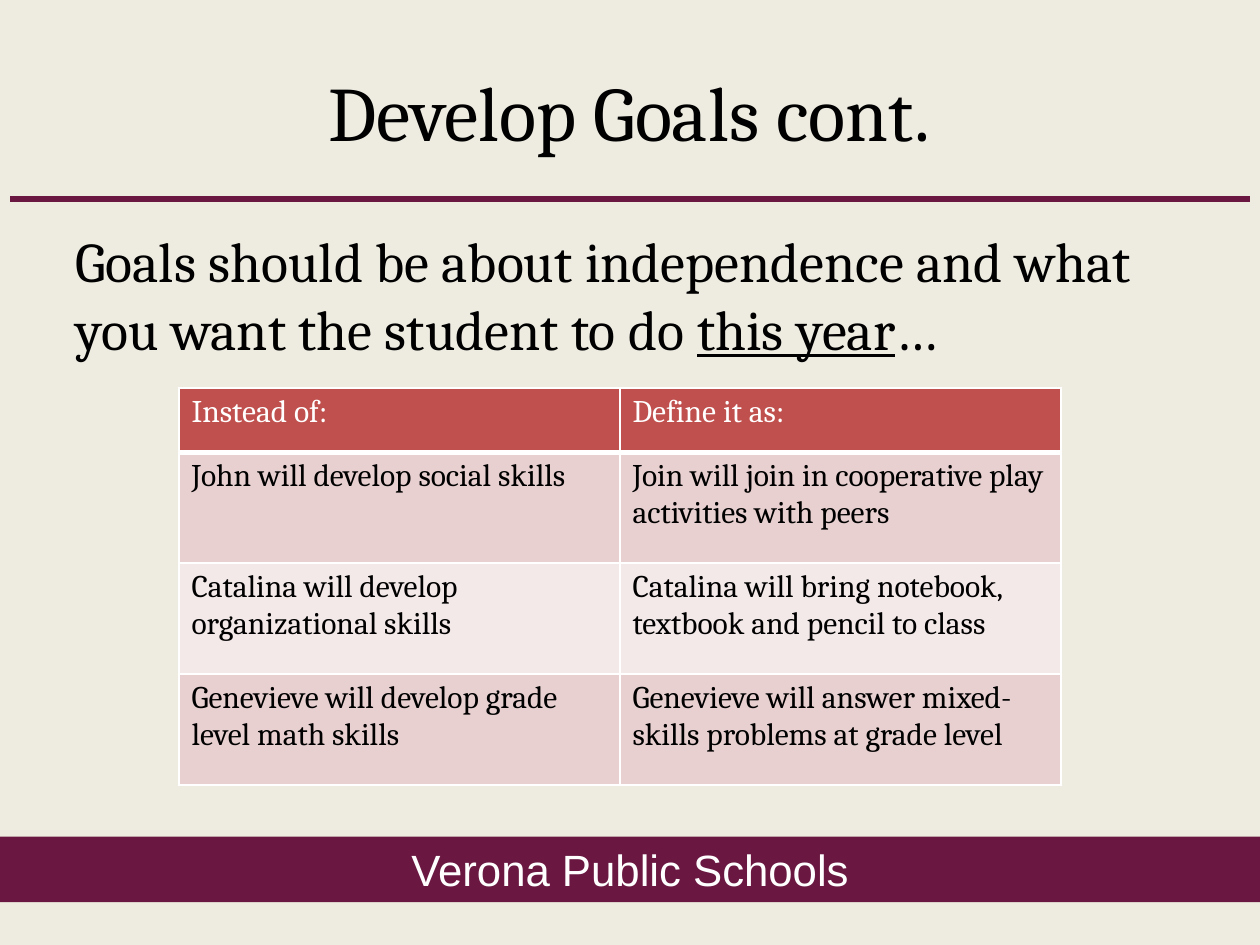
from lxml.etree import SubElement
from pptx import Presentation
from pptx.dml.color import RGBColor
from pptx.enum.shapes import MSO_CONNECTOR, MSO_SHAPE
from pptx.enum.text import MSO_ANCHOR, PP_ALIGN
from pptx.oxml.ns import qn
from pptx.util import Inches, Pt

TITLE = "Develop Goals cont."
GUIDANCE = [
    ("Goals should be about independence and what you want the student to do ", False),
    ("this year", True),
    ("…", False),
]
GOALS = [
    ("Instead of:", "Define it as:"),
    ("John will develop social skills",
     "Join will join in cooperative play activities with peers"),
    ("Catalina will develop organizational skills",
     "Catalina will bring notebook, textbook and pencil to class"),
    ("Genevieve will develop grade level math skills",
     "Genevieve will answer mixed-skills problems at grade level"),
]
SCHOOL = "Verona Public Schools"

WIDTH, HEIGHT = 10, 7.5
MARGIN = 0.05 * WIDTH
CONTENT_WIDTH = WIDTH - 2 * MARGIN
RULE_INSET, RULE_TOP = 0.08, 1.58
COLUMN_WIDTH, HEADER_HEIGHT, GOAL_HEIGHT = 3.5, 0.51, 0.88
MAROON, BLACK, WHITE = "6A1841", "000000", "FFFFFF"
HEADER_FILL, BANDS = "C0504D", ("E8D0D0", "F4E9E9")


def colour(value):
    return RGBColor.from_string(value)


def place(part, left, top, width, height):
    part.left, part.top = Inches(left), Inches(top)
    part.width, part.height = Inches(width), Inches(height)


def add_run(paragraph, text, size, ink=BLACK, face="Cambria", underline=False):
    run = paragraph.add_run()
    run.text = text
    run.font.size = Pt(size)
    run.font.name = face
    run.font.bold = False
    run.font.underline = underline
    run.font.color.rgb = colour(ink)


def add_borders(cell, weights):
    properties = cell._tc.get_or_add_tcPr()
    for side, weight in weights.items():
        border = SubElement(properties, qn(f"a:ln{side}"), w=str(Pt(weight)))
        fill = SubElement(border, qn("a:solidFill"))
        SubElement(fill, qn("a:srgbClr"), val=WHITE)


presentation = Presentation()
presentation.slide_width, presentation.slide_height = Inches(WIDTH), Inches(HEIGHT)
slide = presentation.slides.add_slide(presentation.slide_layouts[1])
slide.background.fill.solid()
slide.background.fill.fore_color.rgb = colour("EEECE1")

banner = slide.shapes.add_shape(
    MSO_SHAPE.RECTANGLE, 0, Inches(6.64), Inches(WIDTH), Inches(0.52))
banner.shadow.inherit = False
banner.fill.solid()
banner.fill.fore_color.rgb = colour(MAROON)
banner.line.fill.background()
banner.text_frame.vertical_anchor = MSO_ANCHOR.MIDDLE
school = banner.text_frame.paragraphs[0]
school.alignment = PP_ALIGN.CENTER
add_run(school, SCHOOL, 25, WHITE, "Arial")

rule = slide.shapes.add_connector(
    MSO_CONNECTOR.STRAIGHT, Inches(WIDTH - RULE_INSET), Inches(RULE_TOP),
    Inches(RULE_INSET), Inches(RULE_TOP))
rule.line.color.rgb = colour(MAROON)
rule.line.width = Pt(3.25)
SubElement(rule._element.spPr, qn("a:effectLst"))

title = slide.shapes.title
place(title, MARGIN, 0.25, CONTENT_WIDTH, 1.25)
title.text_frame.vertical_anchor = MSO_ANCHOR.MIDDLE
heading = title.text_frame.paragraphs[0]
heading.alignment = PP_ALIGN.CENTER
add_run(heading, TITLE, 44)

body = slide.placeholders[1]
place(body, MARGIN, 1.75, CONTENT_WIDTH, 4.95)
guidance = body.text_frame.paragraphs[0]
guidance.space_before = Pt(0)
indents = guidance._p.get_or_add_pPr()
indents.set("marL", "0")
indents.set("indent", "0")
SubElement(indents, qn("a:buNone"))
for text, underline in GUIDANCE:
    add_run(guidance, text, 32, underline=underline)

row_heights = [HEADER_HEIGHT] + [GOAL_HEIGHT] * (len(GOALS) - 1)
goals = slide.shapes.add_table(
    len(GOALS), 2, Inches(1.42), Inches(3.08),
    Inches(2 * COLUMN_WIDTH), Inches(sum(row_heights))).table
for column in goals.columns:
    column.width = Inches(COLUMN_WIDTH)
for row, (height, wording) in enumerate(zip(row_heights, GOALS)):
    goals.rows[row].height = Inches(height)
    is_header = row == 0
    top = 3 if row == 1 else 1
    bottom = 3 if is_header else 1
    for column, text in enumerate(wording):
        cell = goals.cell(row, column)
        add_borders(cell, {"L": 1, "R": 1, "T": top, "B": bottom})
        cell.fill.solid()
        cell.fill.fore_color.rgb = colour(HEADER_FILL if is_header else BANDS[(row - 1) % 2])
        add_run(cell.text_frame.paragraphs[0], text, 18, WHITE if is_header else BLACK)

presentation.save("out.pptx")
